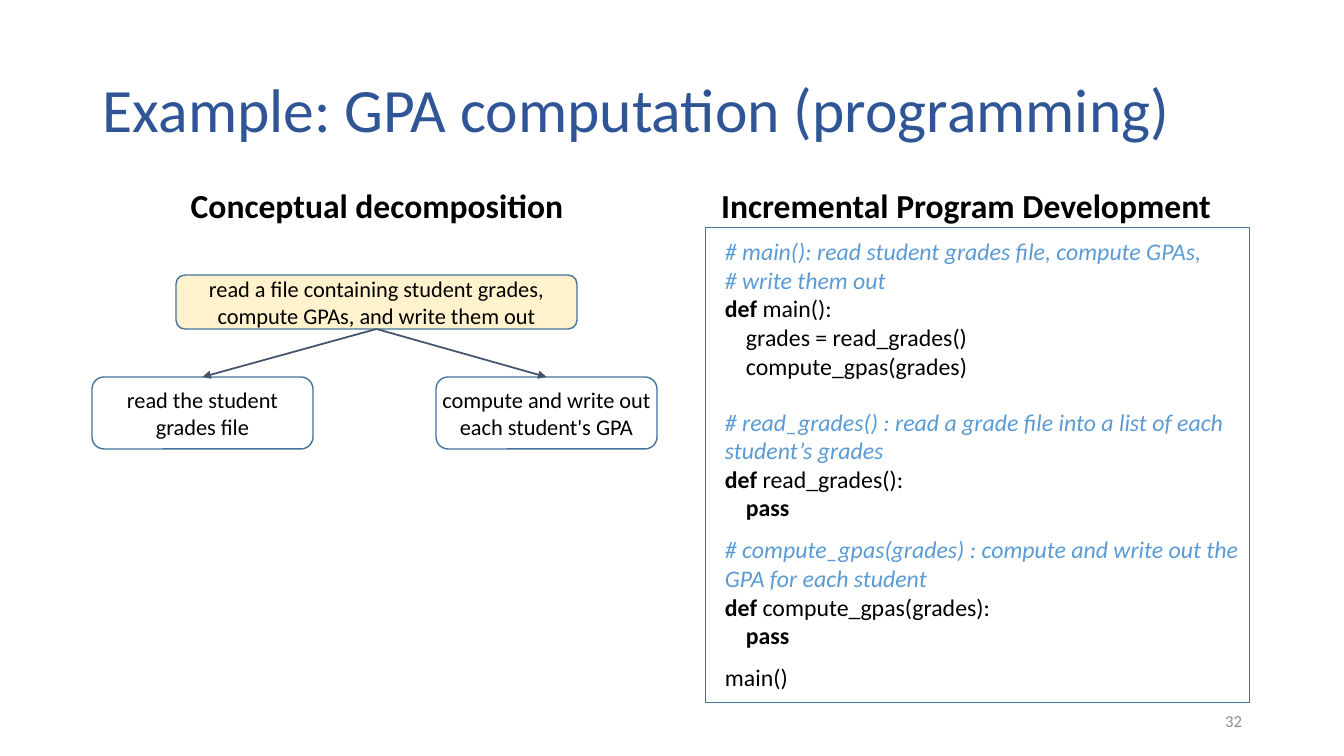
from lxml.etree import SubElement
from pptx import Presentation
from pptx.dml.color import RGBColor
from pptx.enum.shapes import MSO_CONNECTOR, MSO_SHAPE
from pptx.enum.text import MSO_ANCHOR, PP_ALIGN
from pptx.oxml.ns import qn
from pptx.util import Pt

EMU_PER_PX = 914400 / 100.8
FONT = "Calibri"
COLORS = {
    "title": "2F5597",
    "text": "000000",
    "comment": "5B9BD5",
    "number": "8C8C8C",
    "outline": "43739E",
    "goal": "FFF2CC",
    "arrow": "44546A",
}
CODE_INDENT = 21

# Each entry: (kind, keyword, rest of the line, space before in points)
PROGRAM = [
    ("comment", "", "# main(): read student grades file, compute GPAs,", 0),
    ("comment", "", "# write them out", 0),
    ("code", "def", " main():", 0),
    ("body", "", "grades = read_grades()", 0),
    ("body", "", "compute_gpas(grades)", 0),
    ("comment", "", "# read_grades() : read a grade file into a list of each student’s grades", 19.6),
    ("code", "def", " read_grades():", 0),
    ("body", "pass", "", 0),
    ("comment", "", "# compute_gpas(grades) : compute and write out the GPA for each student", 9.7),
    ("code", "def", " compute_gpas(grades):", 0),
    ("body", "pass", "", 0),
    ("code", "", "main()", 9.7),
]


def px(length):
    return round(length * EMU_PER_PX)


def color(name):
    return RGBColor.from_string(COLORS[name])


def style(paragraph, size, color_name="text", align=PP_ALIGN.LEFT, bold=False):
    paragraph.alignment = align
    font = paragraph.font
    font.name, font.size, font.bold = FONT, Pt(size), bold
    font.color.rgb = color(color_name)


def set_insets(frame, left, top, right, bottom):
    frame.margin_left, frame.margin_top = px(left), px(top)
    frame.margin_right, frame.margin_bottom = px(right), px(bottom)


def add_text(page, bounds, text, size, line_spacing=1.0, anchor=MSO_ANCHOR.TOP, **look):
    frame = page.shapes.add_textbox(*map(px, bounds)).text_frame
    frame.word_wrap = True
    frame.vertical_anchor = anchor
    paragraph = frame.paragraphs[0]
    paragraph.text = text
    paragraph.line_spacing = line_spacing
    style(paragraph, size, **look)


def add_box(page, kind, bounds, line_width, fill=None):
    box = page.shapes.add_shape(kind, *map(px, bounds))
    box.shadow.inherit = False
    box.line.color.rgb = color("outline")
    box.line.width = Pt(line_width)
    if fill:
        box.fill.solid()
        box.fill.fore_color.rgb = color(fill)
    else:
        box.fill.background()
    box.text_frame.word_wrap = True
    return box


def add_task(page, bounds, text, fill=None, side_inset=10):
    box = add_box(page, MSO_SHAPE.ROUNDED_RECTANGLE, bounds, 1, fill)
    frame = box.text_frame
    set_insets(frame, side_inset, 5, side_inset, 5)
    frame.vertical_anchor = MSO_ANCHOR.MIDDLE
    frame.paragraphs[0].text = text
    style(frame.paragraphs[0], 16, align=PP_ALIGN.CENTER)
    return box


def add_arrow(page, parent, child):
    """Join the bottom of the parent task to the top of the child task."""
    arrow = page.shapes.add_connector(MSO_CONNECTOR.STRAIGHT, 0, 0, 0, 0)
    arrow.begin_connect(parent, 2)
    arrow.end_connect(child, 0)
    arrow.line.color.rgb = color("arrow")
    arrow.line.width = Pt(1.25)
    SubElement(arrow.line._get_or_add_ln(), qn("a:tailEnd"), type="triangle")
    SubElement(arrow._element.spPr, qn("a:effectLst"))


def add_program(page, bounds):
    frame = add_box(page, MSO_SHAPE.RECTANGLE, bounds, 0.25).text_frame
    set_insets(frame, 20, 10, 10, 5)
    frame.vertical_anchor = MSO_ANCHOR.TOP
    for index, (kind, keyword, rest, gap) in enumerate(PROGRAM):
        paragraph = frame.add_paragraph() if index else frame.paragraphs[0]
        style(paragraph, 17, "comment" if kind == "comment" else "text")
        paragraph.font.italic = kind == "comment"
        paragraph.space_before = Pt(gap)
        if kind == "body":
            paragraph._p.get_or_add_pPr().set("marL", str(px(CODE_INDENT)))
        if keyword:
            span = paragraph.add_run()
            span.text = keyword
            span.font.bold = True
        if rest:
            paragraph.add_run().text = rest


def main():
    deck = Presentation()
    deck.slide_width, deck.slide_height = px(1344), px(756)
    page = deck.slides.add_slide(deck.slide_layouts[6])

    add_text(page, (93, 40, 1159, 146), "Example: GPA computation (programming)", 44,
             line_spacing=0.9, anchor=MSO_ANCHOR.MIDDLE, color_name="title")
    for left, width, heading in [(93, 568, "Conceptual decomposition"),
                                 (680, 572, "Incremental Program Development")]:
        add_text(page, (left, 185, width, 58), heading, 24,
                 line_spacing=0.9, align=PP_ALIGN.CENTER, bold=True)

    add_program(page, (705, 227, 544, 475))
    add_text(page, (950, 701, 302, 40), "32", 12, anchor=MSO_ANCHOR.MIDDLE,
             color_name="number", align=PP_ALIGN.RIGHT)

    goal = add_task(page, (176, 275, 401, 54),
                    "read a file containing student grades, compute GPAs, and write them out",
                    fill="goal")
    reading = add_task(page, (92, 377, 221, 72), "read the student grades file")
    writing = add_task(page, (436, 377, 221, 72),
                       "compute and write out each student's GPA", side_inset=0)
    for step in (reading, writing):
        add_arrow(page, goal, step)

    deck.save("out.pptx")


if __name__ == "__main__":
    main()
